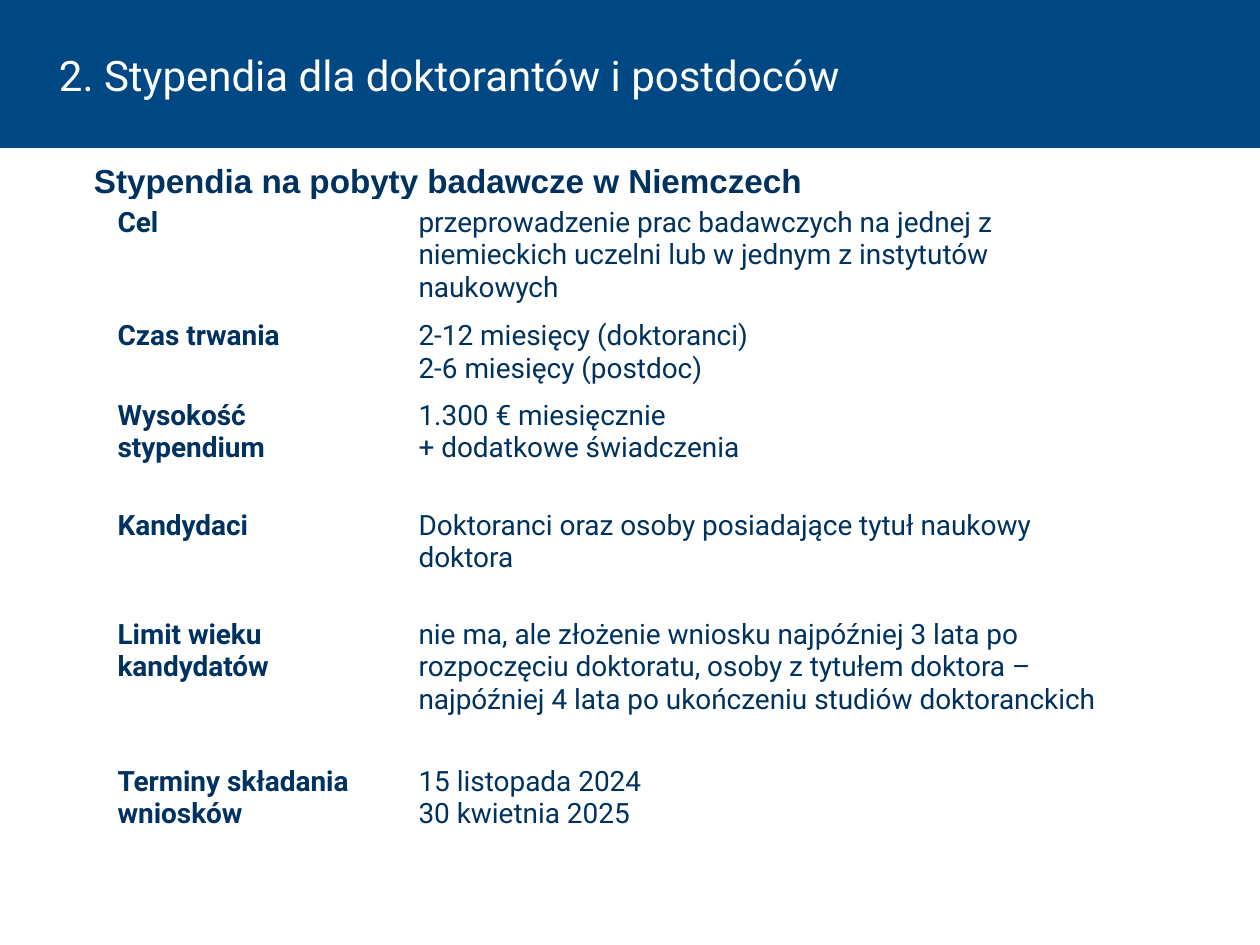
from pptx import Presentation
from pptx.dml.color import RGBColor
from pptx.enum.shapes import MSO_SHAPE as Shape
from pptx.enum.text import MSO_ANCHOR as Anchor, PP_ALIGN as Align
from pptx.util import Emu, Pt

PX = 914400 // 126
COLORS = {"band": "004883", "text": "00325F", "white": "FFFFFF"}

TITLE = "2. Stypendia dla doktorantów i postdoców"
HEADING = "Stypendia na pobyty badawcze w Niemczech"

# Label, details (one paragraph per line), row height in px
ROWS = [
    ("Cel", "przeprowadzenie prac badawczych na jednej z niemieckich uczelni "
            "lub w jednym z instytutów naukowych", 111),
    ("Czas trwania", "2-12 miesięcy (doktoranci)\n2-6 miesięcy (postdoc)", 79),
    ("Wysokość stypendium", "1.300 € miesięcznie\n+ dodatkowe świadczenia", 110),
    ("Kandydaci", "Doktoranci oraz osoby posiadające tytuł naukowy doktora", 109),
    ("Limit wieku kandydatów",
     "nie ma, ale złożenie wniosku najpóźniej 3 lata po rozpoczęciu doktoratu, "
     "osoby z tytułem doktora – najpóźniej 4 lata po ukończeniu studiów "
     "doktoranckich", 147),
    ("Terminy składania wniosków", "15 listopada 2024\n30 kwietnia 2025", 79),
]
COLUMN_WIDTHS = (301, 728)


def px(value):
    return Emu(value * PX)


def color(name):
    return RGBColor.from_string(COLORS[name])


def write(text_frame, text, size, font_name, color_name, bold=False):
    text_frame.text = text
    text_frame.word_wrap = True
    for paragraph in text_frame.paragraphs:
        paragraph.alignment = Align.LEFT
        for run in paragraph.runs:
            run.font.size = Pt(size)
            run.font.name = font_name
            run.font.bold = bold
            run.font.color.rgb = color(color_name)


presentation = Presentation()
presentation.slide_width, presentation.slide_height = px(1260), px(945)
slide = presentation.slides.add_slide(presentation.slide_layouts[6])

# Title band
band = slide.shapes.add_shape(Shape.RECTANGLE, 0, 0, px(1260), px(148))
band.shadow.inherit = False
band.fill.solid()
band.fill.fore_color.rgb = color("band")
band.line.fill.background()
write(band.text_frame, TITLE, 24, "Roboto", "white")
band.text_frame.margin_left = px(59)
band.text_frame.vertical_anchor = Anchor.MIDDLE
band.text_frame.paragraphs[0].line_spacing = Pt(30)

# Heading
heading = slide.shapes.add_textbox(px(94), px(160), px(1061), px(82))
frame = heading.text_frame
frame.margin_left = frame.margin_top = frame.margin_right = frame.margin_bottom = 0
write(frame, HEADING, 19, "Arial", "text", bold=True)

# Scholarship table
heights = [height for _, _, height in ROWS]
table = slide.shapes.add_table(len(ROWS), len(COLUMN_WIDTHS), px(105), px(200),
                               px(sum(COLUMN_WIDTHS)), px(sum(heights))).table
table.first_row = table.horz_banding = False
for column, width in zip(table.columns, COLUMN_WIDTHS):
    column.width = px(width)
for row, (label, details, height) in zip(table.rows, ROWS):
    row.height = px(height)
    for cell, text, bold in zip(row.cells, (label, details), (True, False)):
        cell.fill.background()
        write(cell.text_frame, text, 16, "Roboto", "text", bold)

presentation.save("out.pptx")
